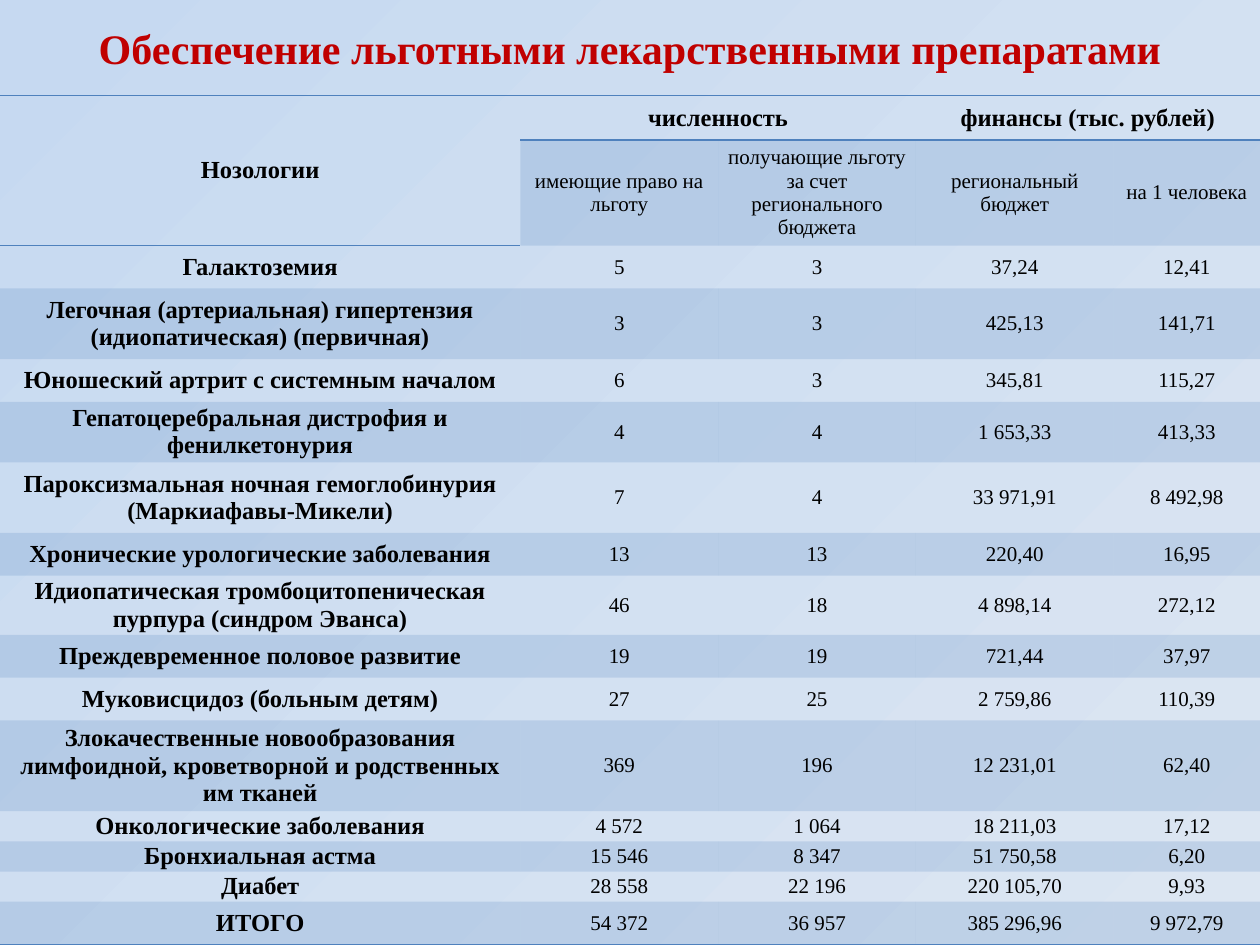
from dataclasses import dataclass

from lxml import etree
from pptx import Presentation
from pptx import util as u
from pptx.dml.color import RGBColor
from pptx.enum import text
from pptx.oxml import parse_xml
from pptx.oxml.ns import nsdecls, qn


@dataclass(frozen=True)
class Theme:
    font: str = "Times New Roman"
    title: str = "C00000"
    ink: str = "000000"
    accent: str = "4F81BD"
    back_light: str = "DCE6F2"
    back_dark: str = "C6D9F1"
    title_size: int = 24
    head_size: int = 14
    body_size: int = 12
    band_alpha: int = 20
    rule_width: int = 1


THEME = Theme()
NO_STYLE = "{2D5ABB26-0587-4C30-8999-92F81FD0307C}"
TITLE = "Обеспечение льготными лекарственными препаратами"
COL_WIDTHS = [4.13, 1.57, 1.57, 1.57, 1.16]
HEADER = [
    (0.35, ["Нозологии", "численность", "", "финансы (тыс. рублей)", ""]),
    (0.84, ["", "имеющие право на льготу",
            "получающие льготу за счет регионального бюджета",
            "региональный бюджет", "на 1 человека"]),
]
DISEASES = [
    (0.34, ["Галактоземия", "5", "3", "37,24", "12,41"]),
    (0.56, ["Легочная (артериальная) гипертензия (идиопатическая) (первичная)",
            "3", "3", "425,13", "141,71"]),
    (0.34, ["Юношеский артрит с системным началом", "6", "3", "345,81", "115,27"]),
    (0.48, ["Гепатоцеребральная дистрофия и фенилкетонурия",
            "4", "4", "1 653,33", "413,33"]),
    (0.56, ["Пароксизмальная ночная гемоглобинурия (Маркиафавы-Микели)",
            "7", "4", "33 971,91", "8 492,98"]),
    (0.34, ["Хронические урологические заболевания", "13", "13", "220,40", "16,95"]),
    (0.47, ["Идиопатическая тромбоцитопеническая пурпура (синдром Эванса)",
            "46", "18", "4 898,14", "272,12"]),
    (0.34, ["Преждевременное половое развитие", "19", "19", "721,44", "37,97"]),
    (0.34, ["Муковисцидоз (больным детям)", "27", "25", "2 759,86", "110,39"]),
    (0.72, ["Злокачественные новообразования лимфоидной, кроветворной и родственных им тканей",
            "369", "196", "12 231,01", "62,40"]),
    (0.24, ["Онкологические заболевания", "4 572", "1 064", "18 211,03", "17,12"]),
    (0.24, ["Бронхиальная астма", "15 546", "8 347", "51 750,58", "6,20"]),
    (0.24, ["Диабет", "28 558", "22 196", "220 105,70", "9,93"]),
    (0.34, ["ИТОГО", "54 372", "36 957", "385 296,96", "9 972,79"]),
]


def set_attributes(obj, values):
    for name, value in values.items():
        setattr(obj, name, value)


def write_text(tf, words, size, color, bold):
    p = tf.paragraphs[0]
    p.alignment = text.PP_ALIGN.CENTER
    if words:
        r = p.add_run()
        r.text = words
        set_attributes(r.font, {"name": THEME.font, "size": u.Pt(size), "bold": bold})
        r.font.color.rgb = RGBColor.from_string(color)


def paint_background(s):
    """Radial gradient centred on the lower right corner."""
    s.background.fill.solid()
    bg = s.element.find(".//" + qn("p:bgPr"))
    gradient = parse_xml(
        f'<a:gradFill {nsdecls("a")} rotWithShape="1"><a:gsLst>'
        f'<a:gs pos="0"><a:srgbClr val="{THEME.back_light}"><a:alpha val="60000"/></a:srgbClr></a:gs>'
        f'<a:gs pos="100000"><a:srgbClr val="{THEME.back_dark}"/></a:gs></a:gsLst>'
        '<a:path path="circle"><a:fillToRect l="100000" t="100000"/></a:path></a:gradFill>')
    bg.replace(bg[0], gradient)


def add_title(s):
    sp = s.shapes.title
    set_attributes(sp, {"left": 0, "top": u.Inches(0.13),
                        "width": u.Inches(10), "height": u.Inches(0.5)})
    set_attributes(sp.text_frame, {"word_wrap": True,
                                   "auto_size": text.MSO_AUTO_SIZE.NONE,
                                   "vertical_anchor": text.MSO_ANCHOR.MIDDLE})
    write_text(sp.text_frame, TITLE, THEME.title_size, THEME.title, True)


def add_rule(cell, side):
    """Draw a line on one side of a cell: lnT or lnB."""
    ln = etree.SubElement(cell._tc.get_or_add_tcPr(), qn(f"a:{side}"),
                          w=str(u.Pt(THEME.rule_width)))
    fill = etree.SubElement(ln, qn("a:solidFill"))
    etree.SubElement(fill, qn("a:srgbClr"), val=THEME.accent)


def fill_cell(cell, banded):
    if not banded:
        cell.fill.background()
        return
    cell.fill.solid()
    cell.fill.fore_color.rgb = RGBColor.from_string(THEME.accent)
    color = cell._tc.tcPr.find(qn("a:solidFill"))[0]
    etree.SubElement(color, qn("a:alpha"), val=str(THEME.band_alpha * 1000))


def format_cell(cell, words, row, col, last):
    set_attributes(cell, {"margin_left": u.Inches(0.06), "margin_right": u.Inches(0.06),
                          "margin_top": 0, "margin_bottom": 0,
                          "vertical_anchor": text.MSO_ANCHOR.MIDDLE})
    heading = row == 0 or col == 0
    size = THEME.head_size if heading else THEME.body_size
    write_text(cell.text_frame, words, size, THEME.ink, heading)
    if row == 0:
        add_rule(cell, "lnT")
    if row in (0, last) or (row, col) == (1, 0):
        if (row, col) != (0, 0):
            add_rule(cell, "lnB")
    # The first column of the second row belongs to the merged heading.
    fill_cell(cell, row % 2 == 1 and (row, col) != (1, 0))


def add_benefits_table(s):
    rows = HEADER + DISEASES
    height = sum(h for h, _ in rows)
    table = s.shapes.add_table(len(rows), len(COL_WIDTHS), 0, u.Inches(0.76),
                               u.Inches(10), u.Inches(height)).table
    set_attributes(table, {"first_row": False, "horz_banding": False})
    table._tbl.tblPr.find(qn("a:tableStyleId")).text = NO_STYLE
    for column, width in zip(table.columns, COL_WIDTHS):
        column.width = u.Inches(width)
    for i, (row_height, words) in enumerate(rows):
        table.rows[i].height = u.Inches(row_height)
        for j, word in enumerate(words):
            format_cell(table.cell(i, j), word, i, j, len(rows) - 1)
    for start, end in [((0, 0), (1, 0)), ((0, 1), (0, 2)), ((0, 3), (0, 4))]:
        table.cell(*start).merge(table.cell(*end))
    add_rule_first = table.cell(0, 0)._tc.tcPr
    add_rule(table.cell(0, 0), "lnB")
    add_rule_first.insert(1, add_rule_first[-1])


def main():
    prs = Presentation()
    set_attributes(prs, {"slide_width": u.Inches(10), "slide_height": u.Inches(7.5)})
    s = prs.slides.add_slide(prs.slide_layouts[5])
    paint_background(s)
    add_title(s)
    add_benefits_table(s)
    prs.save("out.pptx")


if __name__ == "__main__":
    main()
